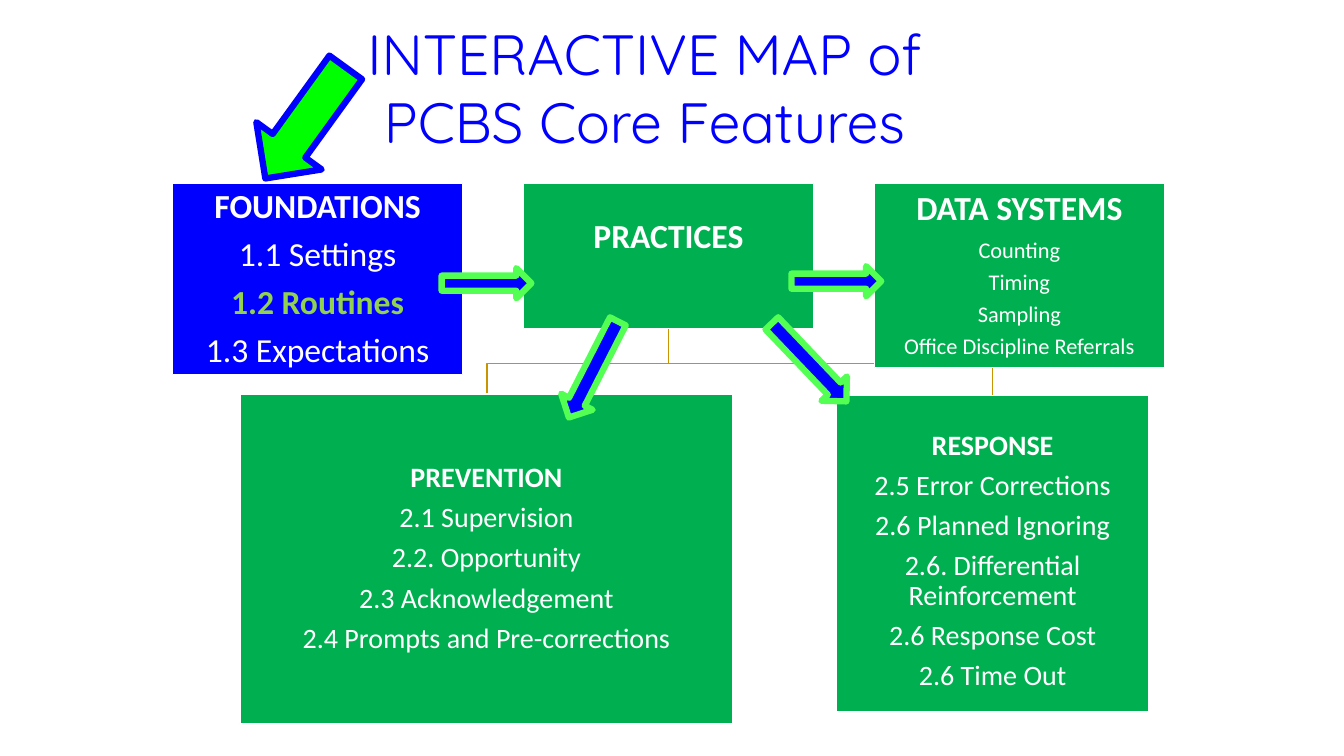
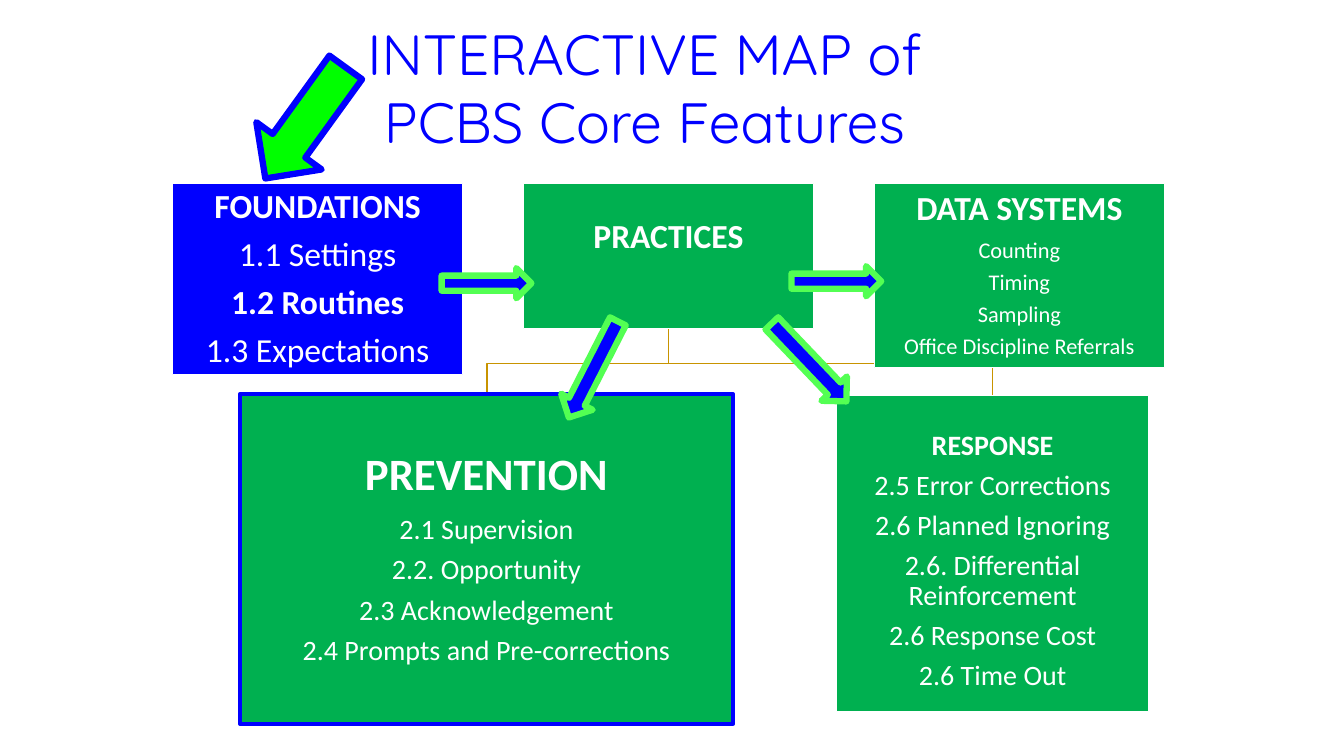
"""Build two slides that show the interactive map of PCBS core features."""
from pptx import Presentation
from pptx.dml.color import RGBColor
from pptx.enum.shapes import MSO_SHAPE as Preset
from pptx.enum.text import MSO_ANCHOR as Anchor, MSO_AUTO_SIZE as AutoSize, PP_ALIGN as Align
from pptx.util import Inches, Pt

COLORS = {
    "blue": "0000FF",
    "green": "00B050",
    "bright green": "00FF00",
    "mint": "53FF53",
    "lime": "92D050",
    "gold": "C89400",
    "white": "FFFFFF",
}
TITLE = "INTERACTIVE MAP of\nPCBS Core Features"
FOUNDATIONS = ["FOUNDATIONS", "1.1 Settings", "1.2 Routines", "1.3 Expectations"]
DATA_SYSTEMS = ["DATA SYSTEMS", "Counting", "Timing", "Sampling", "Office Discipline Referrals"]
PREVENTION = ["PREVENTION", "2.1 Supervision", "2.2. Opportunity",
              "2.3 Acknowledgement", "2.4 Prompts and Pre-corrections"]
RESPONSE = ["RESPONSE", "2.5 Error Corrections", "2.6 Planned Ignoring",
            "2.6. Differential Reinforcement", "2.6 Response Cost", "2.6 Time Out"]
TOP_ROW, TOP_WIDTH = 1.82, 2.88
TRUNK_X, TRUNK_TOP, BRANCH_Y = 6.63, 3.26, 3.61
BRANCHES = [(9.84, 3.92), (4.83, 3.91)]
SMALL_ARROWS = [
    (4.38, 2.66, 0.89, 0.3, 0),
    (7.49, 3.42, 1.07, 0.35, 46.3),
    (7.85, 2.64, 0.89, 0.3, 0),
    (5.35, 3.49, 1.07, 0.35, 117),
]


class FeatureMap:
    """Hold the deck style and the current slide."""

    def __init__(self):
        """Start an empty widescreen deck."""
        self.deck = Presentation()
        self.deck.slide_width = Inches(13.33)
        self.deck.slide_height = Inches(7.5)
        self.page = None

    def color(self, name):
        """Return a palette colour."""
        return RGBColor.from_string(COLORS[name])

    def format_font(self, font, face, size, color, bold=False):
        """Set face, size, colour and weight of a font."""
        font.name, font.size, font.bold = face, Pt(size), bold
        font.color.rgb = self.color(color)

    def paint(self, shape, fill, line, weight):
        """Fill and outline a shape without a shadow."""
        shape.shadow.inherit = False
        shape.fill.solid()
        shape.fill.fore_color.rgb = self.color(fill)
        shape.line.color.rgb = self.color(line)
        shape.line.width = Pt(weight)

    def add_page(self, title):
        """Add a slide with a formatted title."""
        self.page = self.deck.slides.add_slide(self.deck.slide_layouts[5])
        box = self.page.shapes.title
        box.left, box.top = Inches(3.4), Inches(0.13)
        box.width, box.height = Inches(5.99), Inches(1.46)
        frame = box.text_frame
        frame.text = title
        frame.auto_size = AutoSize.NONE
        frame.vertical_anchor = Anchor.MIDDLE
        for para in frame.paragraphs:
            para.alignment = Align.CENTER
            for span in para.runs:
                self.format_font(span.font, "Quicksand", 40.5, "blue")

    def add_branch(self, end_x, end_y):
        """Draw a bent line from the trunk to a lower box."""
        builder = self.page.shapes.build_freeform(Inches(TRUNK_X), Inches(TRUNK_TOP))
        corners = [(TRUNK_X, BRANCH_Y), (end_x, BRANCH_Y), (end_x, end_y)]
        builder.add_line_segments([(Inches(x), Inches(y)) for x, y in corners], close=False)
        branch = builder.convert_to_shape()
        branch.shadow.inherit = False
        branch.fill.background()
        branch.line.color.rgb = self.color("gold")
        branch.line.width = Pt(0.85)

    def add_box(self, place, lines, sizes, fill="green", outline=("white", 0.85),
                insets=(0.02, 0.02), strong=None, strong_color="white"):
        """Add a box with a bold heading above centred items."""
        box = self.page.shapes.add_shape(Preset.RECTANGLE, *map(Inches, place))
        self.paint(box, fill, *outline)
        frame = box.text_frame
        frame.text = "\n".join(lines)
        frame.word_wrap = True
        frame.vertical_anchor = Anchor.MIDDLE
        frame.margin_left = frame.margin_right = Inches(0.02)
        frame.margin_top, frame.margin_bottom = map(Inches, insets)
        for index, para in enumerate(frame.paragraphs):
            size = sizes[min(index, 1)]
            para.alignment = Align.CENTER
            para.line_spacing = 0.9
            para.space_after = Pt(size * 0.35)
            color = strong_color if index == strong else "white"
            for span in para.runs:
                self.format_font(span.font, "Calibri", size, color, index in (0, strong))

    def add_arrow(self, left, top, width, height, angle, fill="blue", line="mint"):
        """Add a block arrow turned by an angle."""
        place = map(Inches, (left, top, width, height))
        arrow = self.page.shapes.add_shape(Preset.RIGHT_ARROW, *place)
        arrow.rotation = angle
        self.paint(arrow, fill, line, 4.5)

    def add_map(self, routines_color, prevention_size, prevention_outline):
        """Add one slide with the whole map."""
        self.add_page(TITLE)
        for branch in BRANCHES:
            self.add_branch(*branch)
        self.add_box((1.71, TOP_ROW, TOP_WIDTH, 1.9), FOUNDATIONS, (24, 24), fill="blue",
                     strong=2, strong_color=routines_color)
        self.add_box((5.19, TOP_ROW, TOP_WIDTH, 1.44), ["PRACTICES"], (24, 24),
                     insets=(0.02, 0.38))
        self.add_box((2.38, 3.91, 4.89, 3.27), PREVENTION, (prevention_size, 20),
                     outline=prevention_outline)
        self.add_box((8.3, 3.92, 3.09, 3.14), RESPONSE, (20, 20), insets=(0.18, 0.02))
        self.add_box((8.67, TOP_ROW, TOP_WIDTH, 1.83), DATA_SYSTEMS, (24, 16))
        self.add_arrow(2.35, 0.82, 1.36, 0.8, 125.9, "bright green", "blue")
        for arrow in SMALL_ARROWS:
            self.add_arrow(*arrow)


def main():
    """Build and save the deck."""
    feature_map = FeatureMap()
    feature_map.add_map("lime", 20, ("white", 0.85))
    feature_map.add_map("white", 32, ("blue", 3))
    feature_map.deck.save("out.pptx")


if __name__ == "__main__":
    main()
